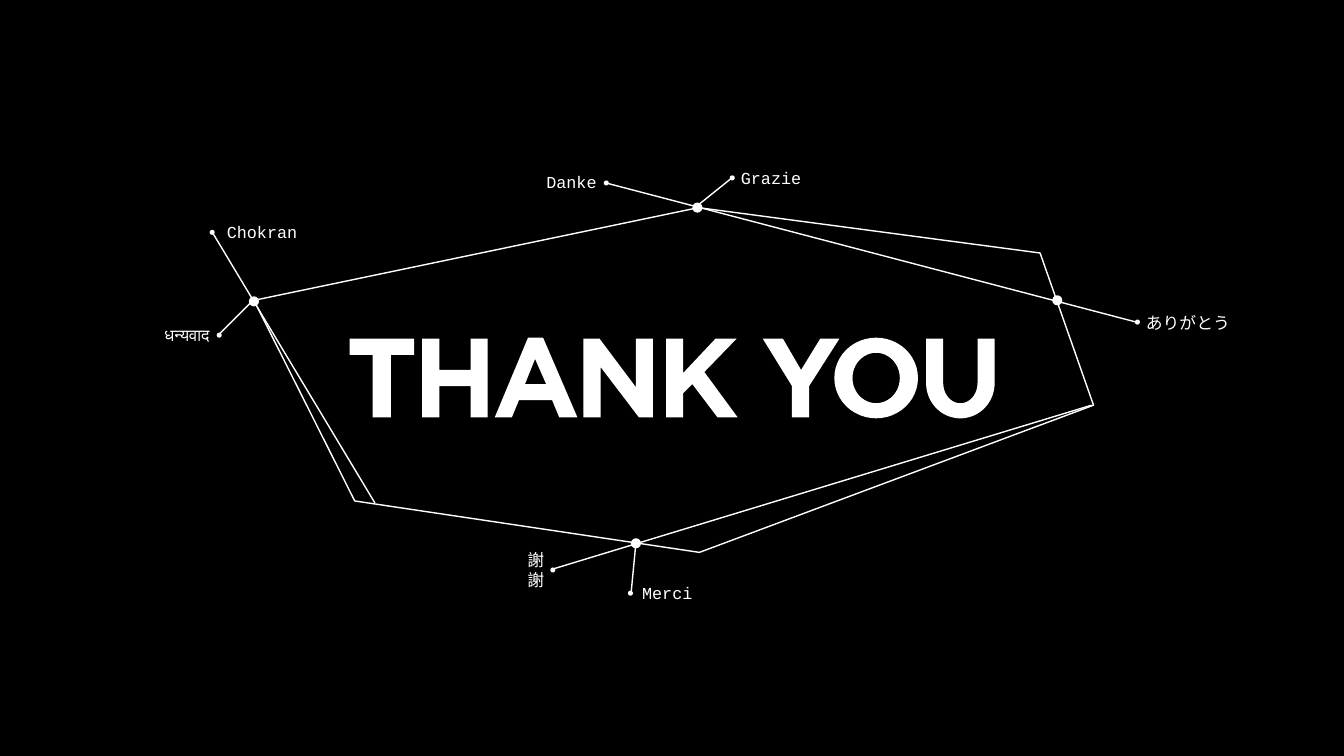
import math
from collections import namedtuple
from dataclasses import dataclass

from lxml import etree
from pptx import Presentation, util as u
from pptx.dml import color
from pptx.enum import shapes, text
from pptx.oxml import ns

Box = namedtuple("Box", "left top")
UNIT = 0.0254


@dataclass(frozen=True)
class Theme:
    ground: color.RGBColor = color.RGBColor(0, 0, 0)
    ink: color.RGBColor = color.RGBColor(255, 255, 255)
    font: str = "Courier New"
    label_size: u.Length = u.Pt(12)
    stroke: u.Length = u.Pt(1)


THEME = Theme()
LABEL_FRAME = {
    "margin_left": 0, "margin_right": 0, "margin_top": 0, "margin_bottom": 0,
    "word_wrap": False, "auto_size": text.MSO_AUTO_SIZE.SHAPE_TO_FIT_TEXT,
    "vertical_anchor": text.MSO_ANCHOR.MIDDLE,
}
LABEL_FONT = {"name": THEME.font, "size": THEME.label_size}

RING = [(593, 56), (152, 148), (252, 347), (594, 398), (985, 252), (932, 101)]
THREADS = [
    (272, 349, 111, 81), (1029, 170, 503, 32), (983, 252, 447, 415),
    (531, 388, 526, 440), (592, 54, 628, 25), (118, 181, 152, 147),
]
HUBS = [(587, 51), (526, 384), (944, 143), (147, 144)]
HUB_SIZE, TIP_SIZE, LABEL_HEIGHT = 10, 5, 20
LEFT, RIGHT = text.PP_ALIGN.LEFT, text.PP_ALIGN.RIGHT
THANKS = [
    ("Chokran", (108, 78), (125, 70, 71), LEFT),
    ("謝謝", (446, 413), (407, 405, 33), RIGHT),
    ("Merci", (523, 436), (537, 428, 51), LEFT),
    ("Danke", (499, 29), (441, 20, 51), RIGHT),
    ("Grazie", (624, 24), (635, 16, 61), LEFT),
    ("ありがとう", (1026, 167), (1037, 160, 84), LEFT),
    ("धन्यवाद", (115, 180), (62, 172, 46), RIGHT),
]


def arc(center_x, center_y, radius_x, radius_y, start, end, steps=48):
    angles = [math.radians(start + (end - start) * i / steps)
              for i in range(steps + 1)]
    return [(center_x + radius_x * math.cos(a), center_y + radius_y * math.sin(a))
            for a in angles]


LETTERS = [
    (0, [[(23, 17), (0, 17), (0, 1), (64, 1), (64, 17), (41, 17), (41, 79),
          (23, 79)]]),
    (72, [[(0, 1), (17, 1), (17, 32), (48, 32), (48, 1), (65, 1), (65, 79),
           (48, 79), (48, 48), (17, 48), (17, 79), (0, 79)]]),
    (144, [[(33, 0), (48, 0), (82, 79), (64, 79), (57, 62), (24, 62), (17, 79),
            (0, 79)],
           [(51, 46), (40, 21), (30, 46)]]),
    (232, [[(0, 1), (16, 1), (52, 49), (52, 1), (69, 1), (69, 79), (55, 79),
            (17, 29), (17, 79), (0, 79)]]),
    (314, [[(0, 1), (17, 1), (17, 35), (49, 1), (70, 1), (38, 34), (71, 79),
            (51, 79), (26, 46), (17, 55), (17, 79), (0, 79)]]),
    (410, [[(29, 48), (0, 1), (20, 1), (38, 32), (57, 1), (76, 1), (46, 48),
            (46, 79), (29, 79)]]),
    (481, [arc(41.5, 40, 41.5, 40, 0, 360), arc(41.5, 40, 23.5, 25, 360, 0)]),
    (572, [[(0, 1), (17, 1), *arc(34, 45, 17, 20, 180, 0), (51, 1), (68, 1),
            *arc(34, 45, 34, 35, 0, 180)]]),
]


def length(units):
    return u.Cm(units * UNIT)


def place(box, x, y):
    return box.left + length(x), box.top + length(y)


def paint(shape, filled):
    shape.shadow.inherit = False
    if filled:
        shape.fill.solid()
        shape.fill.fore_color.rgb = THEME.ink
        shape.line.fill.background()
    else:
        shape.fill.background()
        stroke(shape.line)


def stroke(line):
    line.color.rgb = THEME.ink
    line.width = THEME.stroke


def add_outline(slide, box, contours, filled):
    placed = [[place(box, *point) for point in contour] for contour in contours]
    outline = slide.shapes.build_freeform(*placed[0][0])
    for index, (start, *rest) in enumerate(placed):
        if index:
            outline.move_to(*start)
        outline.add_line_segments(rest, close=True)
    paint(outline.convert_to_shape(), filled)


def add_thread(slide, box, x1, y1, x2, y2):
    thread = slide.shapes.add_connector(
        shapes.MSO_CONNECTOR.STRAIGHT, *place(box, x1, y1), *place(box, x2, y2))
    stroke(thread.line)
    etree.SubElement(thread._element.spPr, ns.qn("a:effectLst"))


def add_dot(slide, box, corner, size):
    dot = slide.shapes.add_shape(
        shapes.MSO_SHAPE.OVAL, *place(box, *corner), length(size), length(size))
    paint(dot, True)


def add_label(slide, box, wording, x, y, width, alignment):
    label = slide.shapes.add_textbox(
        *place(box, x, y), length(width), length(LABEL_HEIGHT))
    paragraph = label.text_frame.paragraphs[0]
    paragraph.alignment = alignment
    run = paragraph.add_run()
    run.text = wording
    run.font.color.rgb = THEME.ink
    for target, values in ((label.text_frame, LABEL_FRAME), (run.font, LABEL_FONT)):
        for attribute, value in values.items():
            setattr(target, attribute, value)


def draw_web(slide, box):
    add_outline(slide, box, [RING], False)
    for thread in THREADS:
        add_thread(slide, box, *thread)
    for hub in HUBS:
        add_dot(slide, box, hub, HUB_SIZE)
    for wording, tip, label_place, alignment in THANKS:
        add_dot(slide, box, tip, TIP_SIZE)
        add_label(slide, box, wording, *label_place, alignment)


def draw_thank_you(slide, box):
    for offset, contours in LETTERS:
        add_outline(slide, Box(*place(box, offset, 0)), contours, True)


def main():
    deck = Presentation()
    deck.slide_width, deck.slide_height = u.Cm(33.87), u.Cm(19.05)
    slide = deck.slides.add_slide(deck.slide_layouts[6])
    slide.background.fill.solid()
    slide.background.fill.fore_color.rgb = THEME.ground
    draw_web(slide, Box(u.Cm(2.54), u.Cm(3.81)))
    draw_thank_you(slide, Box(u.Cm(8.81), u.Cm(8.51)))
    deck.save("out.pptx")


if __name__ == "__main__":
    main()
